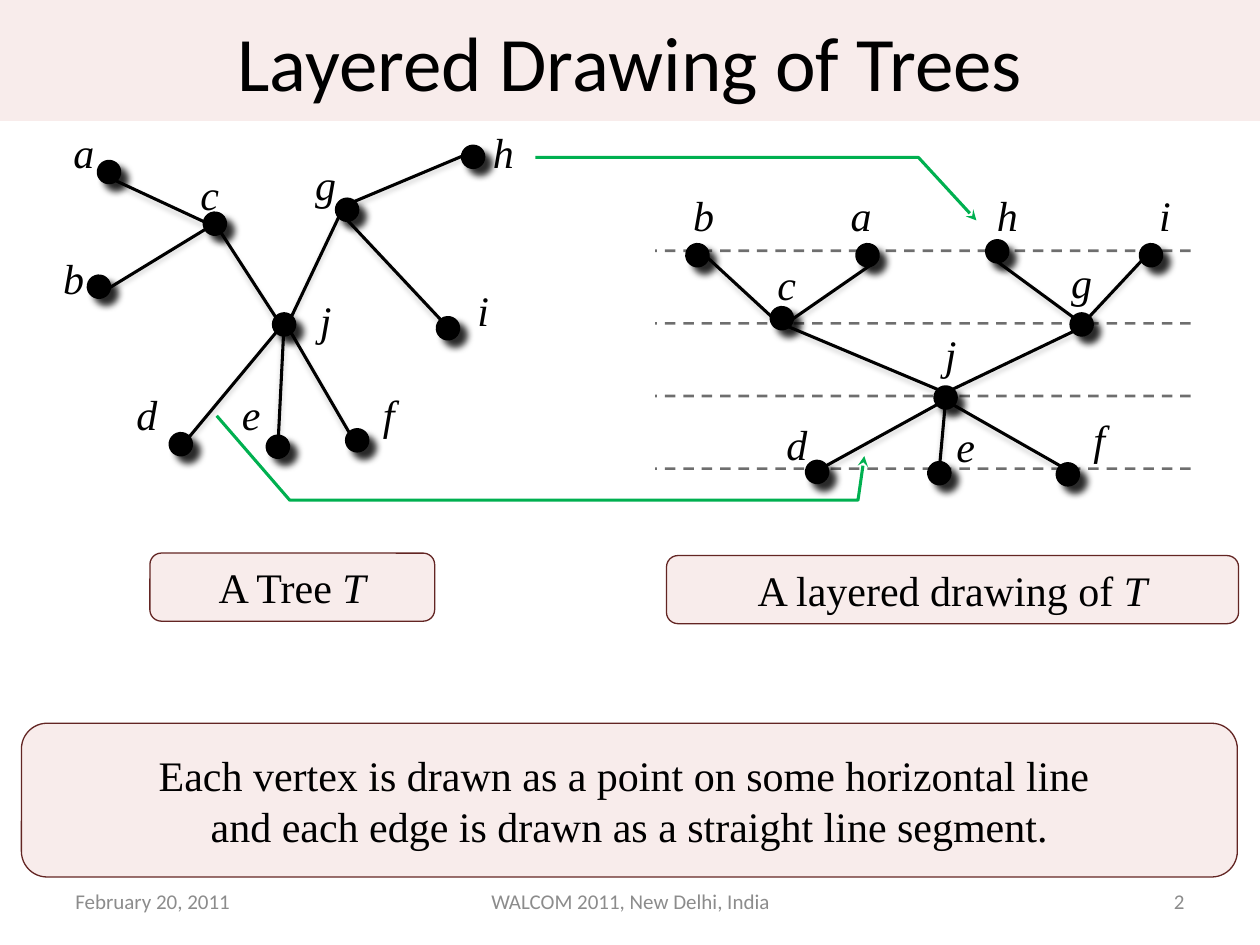
"""Build the slide that compares a tree with its layered drawing."""
from typing import NamedTuple

from lxml import etree
from pptx import Presentation
from pptx.dml.color import RGBColor
from pptx.enum import dml, shapes, text
from pptx.oxml import ns
from pptx.util import Inches, Pt

BLACK = RGBColor(0x00, 0x00, 0x00)
GREY = RGBColor(0x8C, 0x8C, 0x8C)
GREEN = RGBColor(0x00, 0xB0, 0x50)
PINK = RGBColor(0xE6, 0xB9, 0xB8)
MAROON = RGBColor(0x63, 0x25, 0x23)

SERIF = "Times New Roman"
SANS = "Calibri"
DOT = 0.17
LABEL_SIZE = (0.33, 0.25)
TURN = 234
LAYER_TOP, LAYER_BOTTOM, LAYER_COUNT = 1.99, 3.72, 4


class Vertex(NamedTuple):
    name: str
    dot: tuple[float, float]
    label: tuple[float, float]
    rotation: int = 0


class Edge(NamedTuple):
    x1: float
    y1: float
    x2: float
    y2: float


class Panel(NamedTuple):
    box: tuple[float, float, float, float]
    words: str
    variable: str = ""


class Footer(NamedTuple):
    left: float
    width: float
    words: str
    align: text.PP_ALIGN


class Shadow(NamedTuple):
    alpha: int
    blur: float
    distance: float
    direction: int


DOT_SHADOW = Shadow(83, 4, 5.66, 45)
EDGE_SHADOW = Shadow(18, 3, 2, 90)

TREE_VERTICES = [
    Vertex("a", (0.78, 1.28), (0.5, 1.08), TURN),
    Vertex("b", (0.7, 2.19), (0.42, 2.08), TURN),
    Vertex("c", (1.62, 1.69), (1.5, 1.41), TURN),
    Vertex("d", (1.35, 3.44), (1, 3.16), TURN),
    Vertex("e", (2.12, 3.46), (1.83, 3.16), TURN),
    Vertex("f", (2.75, 3.41), (2.92, 3.16)),
    Vertex("g", (2.67, 1.58), (2.42, 1.33)),
    Vertex("h", (3.67, 1.16), (3.83, 1.08)),
    Vertex("i", (3.47, 2.52), (3.67, 2.33), TURN),
    Vertex("j", (2.17, 2.49), (2.42, 2.41)),
]
TREE_EDGES = [
    Edge(3.81, 1.18, 2.81, 1.6), Edge(3.5, 2.54, 2.75, 1.74),
    Edge(2.31, 2.52, 2.69, 1.72), Edge(2.19, 2.64, 1.5, 3.47),
    Edge(2.25, 2.66, 2.21, 3.46), Edge(2.31, 2.64, 2.77, 3.43),
    Edge(1.62, 1.76, 0.91, 1.43), Edge(1.63, 1.82, 0.86, 2.29),
    Edge(2.19, 2.52, 1.75, 1.84),
]
LAYERED_VERTICES = [
    Vertex("a", (6.8, 1.94), (6.67, 1.58), TURN),
    Vertex("b", (5.45, 1.94), (5.42, 1.58), TURN),
    Vertex("c", (6.12, 2.44), (6.08, 2.13), TURN),
    Vertex("d", (6.4, 3.66), (6.16, 3.4), TURN),
    Vertex("e", (7.37, 3.67), (7.5, 3.41), TURN),
    Vertex("f", (8.39, 3.68), (8.56, 3.36)),
    Vertex("g", (8.5, 2.49), (8.42, 2.11)),
    Vertex("h", (7.83, 1.91), (7.83, 1.58)),
    Vertex("i", (9.05, 1.94), (9.08, 1.58), TURN),
    Vertex("j", (7.42, 3.07), (7.38, 2.68)),
]
LAYERED_EDGES = [
    Edge(7.92, 2.08, 8.52, 2.52), Edge(9.06, 2.07, 8.64, 2.52),
    Edge(7.56, 3.09, 8.52, 2.63), Edge(7.44, 3.21, 6.55, 3.7),
    Edge(7.5, 3.23, 7.46, 3.67), Edge(7.56, 3.21, 8.42, 3.7),
    Edge(6.28, 2.54, 6.93, 2.09), Edge(6.12, 2.51, 5.61, 2.04),
    Edge(7.44, 3.09, 6.25, 2.59),
]
VERTEX_ARROW = [(4.25, 1.25), (7.29, 1.25), (7.75, 1.75)]
EDGE_ARROW = [(1.72, 3.3), (2.3, 3.97), (6.81, 3.97), (6.86, 3.62)]
PANELS = [
    Panel((0.17, 5.74, 9.65, 1.22), "Each vertex is drawn as a point on some horizontal line \n"
          "and each edge is drawn as a straight line segment."),
    Panel((1.19, 4.39, 2.26, 0.54), "A Tree ", "T"),
    Panel((5.29, 4.41, 4.54, 0.54), "A layered drawing of ", "T"),
]
FOOTERS = [
    Footer(0.5, 2.33, "February 20, 2011", text.PP_ALIGN.LEFT),
    Footer(3.42, 3.17, "WALCOM 2011, New Delhi, India", text.PP_ALIGN.CENTER),
    Footer(7.17, 2.33, "2", text.PP_ALIGN.RIGHT),
]


def write(box, words: str, *, variable="", size=24, font=SERIF, color=BLACK,
          italic=False, align=text.PP_ALIGN.CENTER, margin=0.1) -> None:
    """Fill a box with formatted lines and an optional italic variable."""
    frame = box.text_frame
    frame.word_wrap = True
    frame.vertical_anchor = text.MSO_ANCHOR.MIDDLE
    frame.margin_left = frame.margin_right = Inches(margin)
    frame.margin_top = frame.margin_bottom = Inches(margin / 2)
    for number, line in enumerate(words.split("\n")):
        para = frame.add_paragraph() if number else frame.paragraphs[0]
        para.alignment = align
        for part, slanted in ((line, italic), (variable, True)):
            if part:
                span = para.add_run()
                span.text = part
                span.font.size, span.font.name = Pt(size), font
                span.font.italic = slanted
                span.font.color.rgb = color


def set_alpha(color_parent, percent: int) -> None:
    """Make the colours inside an element partly transparent."""
    for color in color_parent.iter(ns.qn("a:srgbClr")):
        etree.SubElement(color, ns.qn("a:alpha"), val=str(percent * 1000))


def cast_shadow(effects, shadow: Shadow) -> None:
    """Add an outer shadow to an effect list."""
    outer = etree.SubElement(
        effects, ns.qn("a:outerShdw"), blurRad=str(Pt(shadow.blur)),
        dist=str(Pt(shadow.distance)), dir=str(shadow.direction * 60000),
        algn="ctr", rotWithShape="0")
    etree.SubElement(outer, ns.qn("a:srgbClr"), val=str(BLACK))
    set_alpha(outer, shadow.alpha)


def add_filled(page, kind, box, color: RGBColor, alpha: int = 100):
    """Add a filled preset shape without outline."""
    shape = page.shapes.add_shape(kind, *map(Inches, box))
    shape.shadow.inherit = False
    shape.fill.solid()
    shape.fill.fore_color.rgb = color
    if alpha < 100:
        set_alpha(shape.fill._xPr, alpha)
    shape.line.fill.background()
    return shape


def outline(shape, color: RGBColor, width: float) -> None:
    """Give a shape or connector a solid line."""
    shape.line.color.rgb = color
    shape.line.width = Pt(width)


def add_line(page, edge: Edge, width: float):
    """Add a straight black line and return it with its effect list."""
    line = page.shapes.add_connector(shapes.MSO_CONNECTOR.STRAIGHT, *map(Inches, edge))
    outline(line, BLACK, width)
    return line, etree.SubElement(line._element.spPr, ns.qn("a:effectLst"))


def draw_layers(page) -> None:
    """Draw the evenly spaced dashed layer lines."""
    gap = (LAYER_BOTTOM - LAYER_TOP) / (LAYER_COUNT - 1)
    for number in range(LAYER_COUNT):
        y = LAYER_TOP + number * gap
        line, _ = add_line(page, Edge(9.45, y, 5.2, y), 1.5)
        set_alpha(line._element.spPr, 56)
        line.line.dash_style = dml.MSO_LINE.DASH


def draw_graph(page, vertices: list[Vertex], edges: list[Edge]) -> None:
    """Draw the vertices, edges and labels of one graph."""
    for vertex in vertices:
        dot = add_filled(page, shapes.MSO_SHAPE.OVAL, (*vertex.dot, DOT, DOT), BLACK)
        outline(dot, BLACK, 1.75)
        dot.rotation = vertex.rotation
        cast_shadow(dot._element.spPr.find(ns.qn("a:effectLst")), DOT_SHADOW)
    for edge in edges:
        _, effects = add_line(page, edge, 1.75)
        cast_shadow(effects, EDGE_SHADOW)
    for vertex in vertices:
        box = page.shapes.add_textbox(*map(Inches, vertex.label + LABEL_SIZE))
        write(box, vertex.name, italic=True, margin=0)


def draw_arrow(page, points: list[tuple[float, float]]) -> None:
    """Draw a bent green arrow through the points."""
    start, *rest = [(Inches(x), Inches(y)) for x, y in points]
    builder = page.shapes.build_freeform(*start)
    builder.add_line_segments(rest, close=False)
    arrow = builder.convert_to_shape()
    arrow.shadow.inherit = False
    arrow.fill.background()
    outline(arrow, GREEN, 1.75)
    etree.SubElement(arrow.line._get_or_add_ln(), ns.qn("a:tailEnd"), type="stealth")


def main() -> None:
    """Assemble and save the deck."""
    deck = Presentation()
    deck.slide_width, deck.slide_height = Inches(10), Inches(7.5)
    page = deck.slides.add_slide(deck.slide_layouts[6])
    title = add_filled(page, shapes.MSO_SHAPE.RECTANGLE, (0, 0, 10, 0.96), PINK, 27)
    write(title, "Layered Drawing of Trees", size=44, font=SANS)
    for footer in FOOTERS:
        box = page.shapes.add_textbox(*map(Inches, (footer.left, 6.95, footer.width, 0.4)))
        write(box, footer.words, size=12, font=SANS, color=GREY, align=footer.align)
    draw_layers(page)
    draw_graph(page, TREE_VERTICES, TREE_EDGES)
    draw_graph(page, LAYERED_VERTICES, LAYERED_EDGES)
    for panel in PANELS:
        box = add_filled(page, shapes.MSO_SHAPE.ROUNDED_RECTANGLE, panel.box, PINK, 27)
        outline(box, MAROON, 0.75)
        write(box, panel.words, variable=panel.variable)
    for points in (VERTEX_ARROW, EDGE_ARROW):
        draw_arrow(page, points)
    deck.save("out.pptx")


if __name__ == "__main__":
    main()
